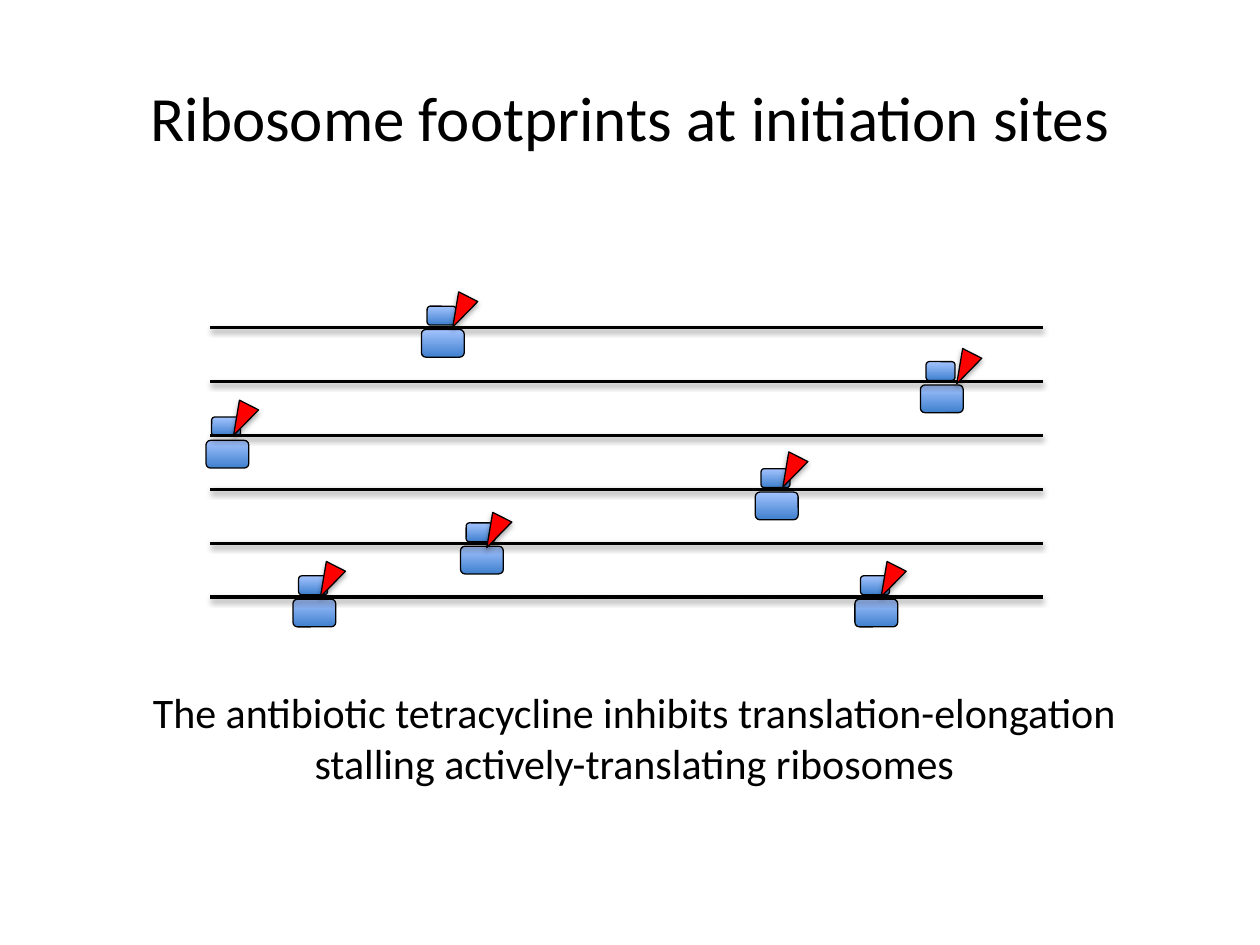
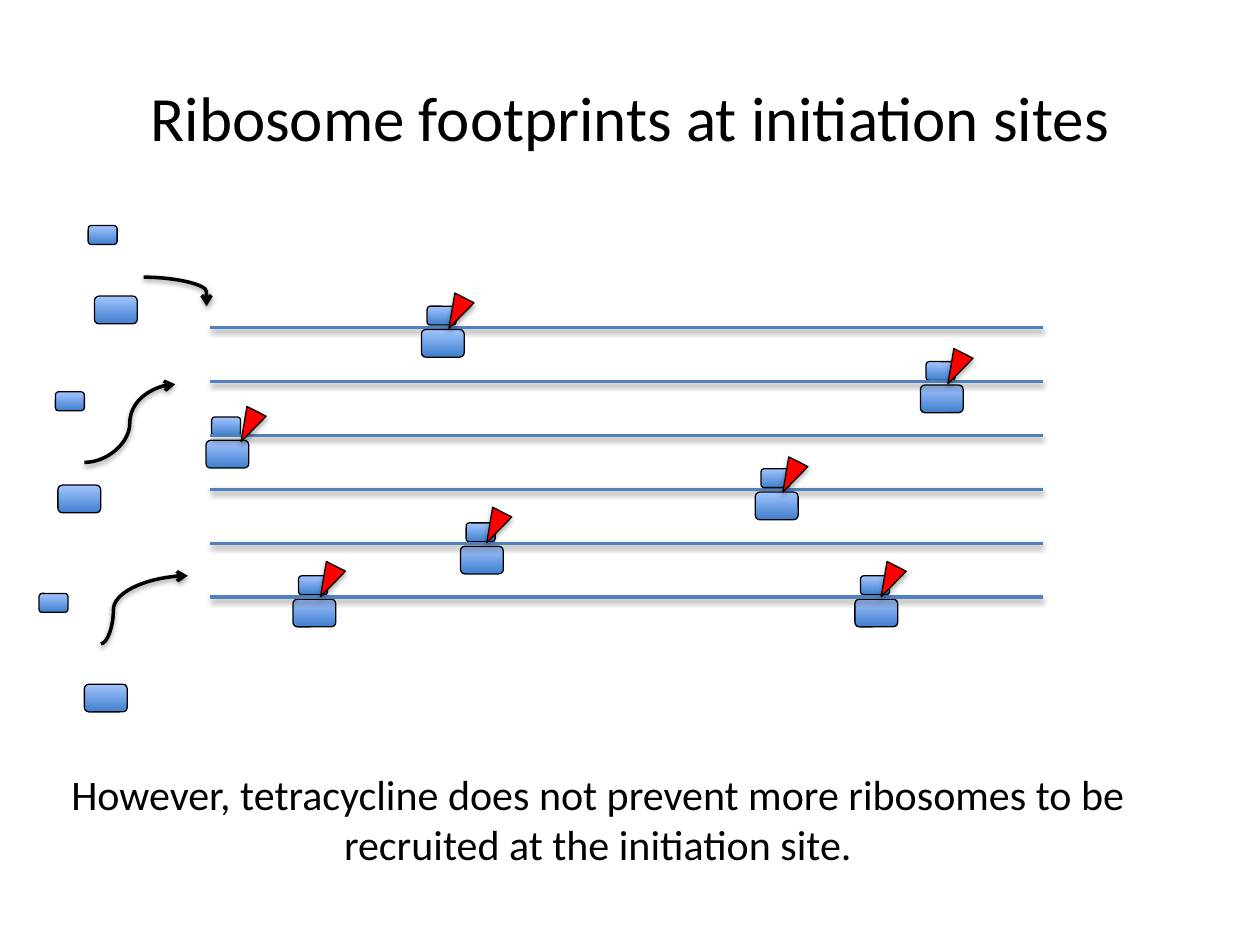
from lxml.etree import SubElement
from pptx import Presentation
from pptx.dml.color import RGBColor
from pptx.enum.shapes import MSO_CONNECTOR, MSO_SHAPE
from pptx.enum.text import MSO_ANCHOR, PP_ALIGN
from pptx.oxml.ns import qn
from pptx.util import Inches, Pt

COLORS = {
    "ink": "000000",
    "strand": "4F81BD",
    "subunit_dark": "3F80CE",
    "subunit_light": "A4C4FF",
    "antibiotic": "FF0000",
}
FONT = "Calibri"
COLUMNS, ROWS = 100, 75

TITLE = "Ribosome footprints at initiation sites"

# Subunit sizes, and the large subunit's offset from the small one
SMALL, LARGE = (2.3, 1.5), (3.4, 2.2)
LARGE_OFFSET = (-0.45, 1.85)

# Messenger strands
STRAND_LEFT, STRAND_RIGHT = 16.7, 82.8
FIRST_STRAND, STRAND_GAP, STRAND_COUNT = 26, 4.28, 6

# Small-subunit corners of the ribosomes behind and in front of the strands
RIBOSOMES_BEHIND = [(37, 41.5), (16.8, 33.1), (68.3, 45.7), (73.5, 28.7), (23.7, 45.7)]
RIBOSOMES_IN_FRONT = [(33.9, 24.3), (60.4, 37.2)]

# Antibiotic markers on each slide
STALLING_MARKERS = [(25.2, 44.8), (18.3, 32), (38.4, 40.9), (61.9, 36.1),
                    (69.7, 44.8), (75.7, 27.9), (35.7, 23.4)]
RECRUITING_MARKERS = [(18.9, 32.5), (25.2, 44.8), (38.4, 40.5), (35.4, 23.5),
                      (61.9, 36.5), (69.7, 44.8), (75, 27.9)]

# Free subunits as (small corner, large corner), and their paths to the strands
FREE_SUBUNITS = [((3.1, 47.1), (6.7, 54.3)), ((4.4, 31.1), (4.6, 38.5)),
                 ((7, 17.9), (7.5, 23.5))]
RECRUITMENT_ARROWS = [((11.4, 22), (16.4, 24.3), 0.998),
                      ((6.7, 36.7), (13.9, 30.5), 0.5),
                      ((8, 51.1), (14.9, 45.7), 0.145)]


class Deck:
    """Holds the style and the current slide."""

    def __init__(self):
        self.prs = Presentation()
        self.prs.slide_width, self.prs.slide_height = Inches(10), Inches(7.5)
        self.slide = None

    def x(self, columns):
        return int(self.prs.slide_width * columns / COLUMNS)

    def y(self, rows):
        return int(self.prs.slide_height * rows / ROWS)

    def box(self, corner, size):
        return self.x(corner[0]), self.y(corner[1]), self.x(size[0]), self.y(size[1])

    def color(self, name):
        return RGBColor.from_string(COLORS[name])

    def new_slide(self):
        self.slide = self.prs.slides.add_slide(self.prs.slide_layouts[6])

    def text(self, words, corner, size, points):
        frame = self.slide.shapes.add_textbox(*self.box(corner, size)).text_frame
        frame.word_wrap = True
        frame.vertical_anchor = MSO_ANCHOR.MIDDLE
        paragraph = frame.paragraphs[0]
        paragraph.alignment = PP_ALIGN.CENTER
        run = paragraph.add_run()
        run.text = words
        run.font.name, run.font.size = FONT, Pt(points)
        run.font.color.rgb = self.color("ink")

    def outline(self, shape, color, points):
        shape.line.color.rgb = self.color(color)
        shape.line.width = Pt(points)

    def drop_shadow(self, shape, distance, opacity):
        properties = shape.element.spPr
        effects = properties.find(qn("a:effectLst"))
        if effects is None:
            effects = SubElement(properties, qn("a:effectLst"))
        shadow = SubElement(effects, qn("a:outerShdw"), blurRad=str(Pt(3.1)),
                            dist=str(Pt(distance)), dir="5400000", rotWithShape="0")
        ink = SubElement(shadow, qn("a:srgbClr"), val=COLORS["ink"])
        SubElement(ink, qn("a:alpha"), val=str(opacity * 1000))

    def subunit(self, corner, size, shapes=None):
        shapes = shapes or self.slide.shapes
        subunit = shapes.add_shape(MSO_SHAPE.ROUNDED_RECTANGLE, *self.box(corner, size))
        subunit.fill.gradient()
        subunit.fill.gradient_angle = 90
        for stop, name in zip(subunit.fill.gradient_stops, ("subunit_dark", "subunit_light")):
            stop.color.rgb = self.color(name)
        self.outline(subunit, "ink", 0.75)
        subunit.shadow.inherit = False

    def ribosome(self, corner):
        members = self.slide.shapes.add_group_shape().shapes
        self.subunit(corner, SMALL, members)
        large = [c + offset for c, offset in zip(corner, LARGE_OFFSET)]
        self.subunit(large, LARGE, members)

    def marker(self, corner):
        marker = self.slide.shapes.add_shape(
            MSO_SHAPE.ISOSCELES_TRIANGLE, *self.box(corner, (1.7, 2.7)))
        marker.rotation = 207
        marker.fill.solid()
        marker.fill.fore_color.rgb = self.color("antibiotic")
        self.outline(marker, "ink", 0.75)
        marker.shadow.inherit = False
        self.drop_shadow(marker, 1.8, 35)

    def connector(self, kind, start, end, color):
        connector = self.slide.shapes.add_connector(
            kind, self.x(start[0]), self.y(start[1]), self.x(end[0]), self.y(end[1]))
        self.outline(connector, color, 2)
        self.drop_shadow(connector, 1.6, 38)
        return connector

    def curved_arrow(self, start, end, bend):
        arrow = self.connector(MSO_CONNECTOR.CURVE, start, end, "ink")
        properties = arrow.element.spPr
        SubElement(properties.find(qn("a:ln")), qn("a:tailEnd"), type="arrow")
        adjustments = properties.find(qn("a:prstGeom")).find(qn("a:avLst"))
        SubElement(adjustments, qn("a:gd"), name="adj1", fmla=f"val {round(bend * 100000)}")

    def translation_scene(self, strand_color):
        """Title, strands and the ribosomes sitting on them."""
        self.new_slide()
        self.text(TITLE, (5, 3), (90, 12.5), 36)
        for corner in RIBOSOMES_BEHIND:
            self.ribosome(corner)
        for i in range(STRAND_COUNT):
            row = FIRST_STRAND + i * STRAND_GAP
            self.connector(MSO_CONNECTOR.STRAIGHT, (STRAND_LEFT, row),
                           (STRAND_RIGHT, row), strand_color)
        for corner in RIBOSOMES_IN_FRONT:
            self.ribosome(corner)

    def caption(self, words, corner):
        self.text(words, corner, (86.1, 13.4), 24)

    def markers(self, corners):
        for corner in corners:
            self.marker(corner)


def main():
    deck = Deck()

    # Slide 1: tetracycline stalls translating ribosomes
    deck.translation_scene("ink")
    deck.caption("The antibiotic tetracycline inhibits translation-elongation "
                 "stalling actively-translating ribosomes", (7.3, 51.8))
    deck.markers(STALLING_MARKERS)

    # Slide 2: free subunits are still recruited
    deck.translation_scene("strand")
    for small, large in FREE_SUBUNITS:
        deck.subunit(small, SMALL)
        deck.subunit(large, LARGE)
    for start, end, bend in RECRUITMENT_ARROWS:
        deck.curved_arrow(start, end, bend)
    deck.caption("However, tetracycline does not prevent more ribosomes to be "
                 "recruited at the initiation site.", (4.4, 58.3))
    deck.markers(RECRUITING_MARKERS)

    deck.prs.save("out.pptx")


if __name__ == "__main__":
    main()
